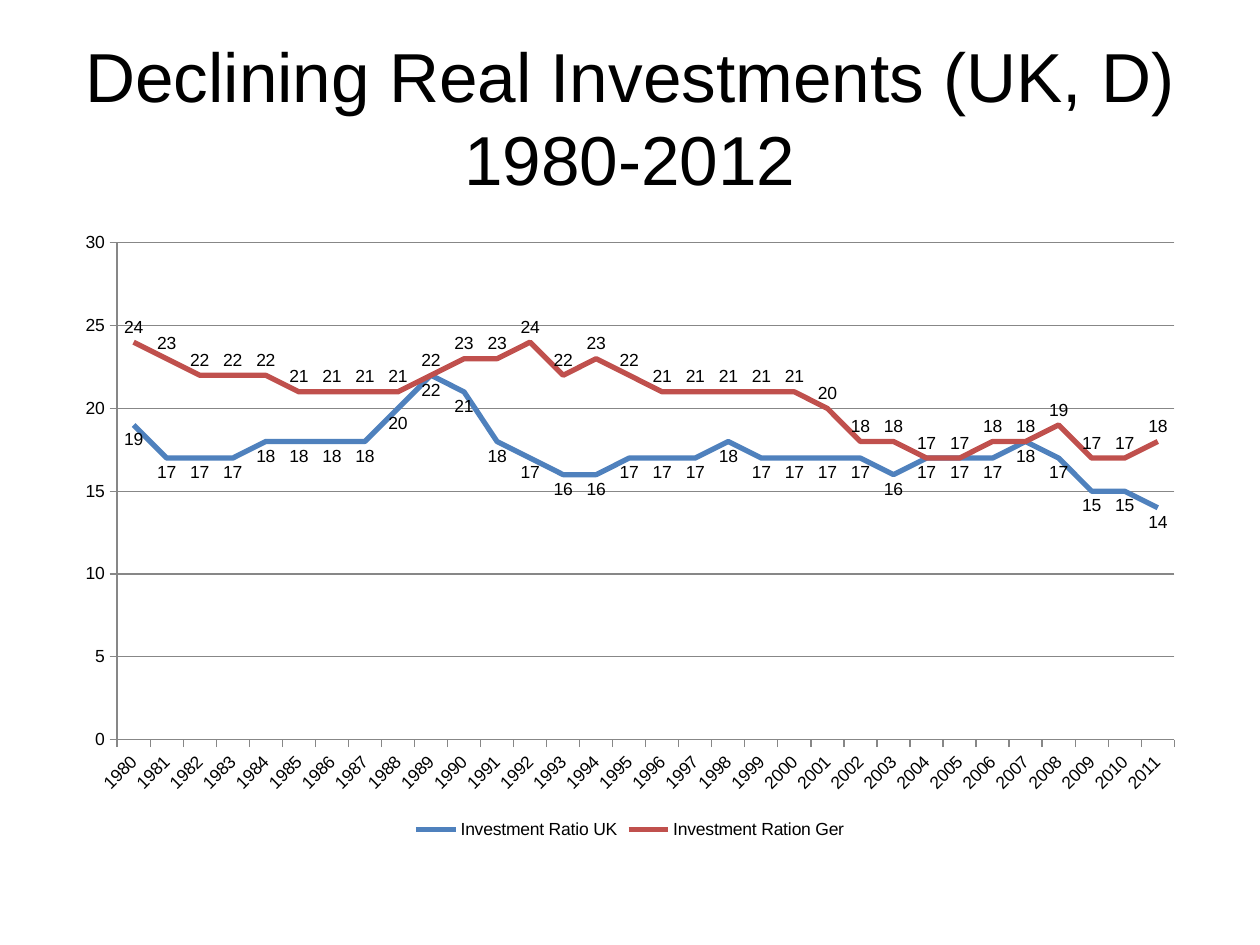
from pptx import Presentation
from pptx.chart.data import CategoryChartData
from pptx.dml.color import RGBColor
from pptx.enum.chart import (XL_CHART_TYPE, XL_LABEL_POSITION,
                             XL_LEGEND_POSITION, XL_MARKER_STYLE, XL_TICK_MARK)
from pptx.enum.text import MSO_ANCHOR, PP_ALIGN
from pptx.util import Inches, Pt

LINE = XL_CHART_TYPE.LINE
ABOVE, BELOW = XL_LABEL_POSITION.ABOVE, XL_LABEL_POSITION.BELOW
BOTTOM = XL_LEGEND_POSITION.BOTTOM
BARE = XL_MARKER_STYLE.NONE
OUT, NONE = XL_TICK_MARK.OUTSIDE, XL_TICK_MARK.NONE
CENTER, MIDDLE = PP_ALIGN.CENTER, MSO_ANCHOR.MIDDLE

# Content
TITLE = "Declining Real Investments (UK, D) 1980-2012"
YEARS = [str(year) for year in range(1980, 2012)]
RATIOS = [
    {"name": "Investment Ratio UK", "color": "uk", "place": BELOW,
     "vals": [19, 17, 17, 17, 18, 18, 18, 18, 20, 22, 21, 18, 17, 16, 16, 17,
              17, 17, 18, 17, 17, 17, 17, 16, 17, 17, 17, 18, 17, 15, 15, 14]},
    {"name": "Investment Ration Ger", "color": "ger", "place": ABOVE,
     "vals": [24, 23, 22, 22, 22, 21, 21, 21, 21, 22, 23, 23, 24, 22, 23, 22,
              21, 21, 21, 21, 21, 20, 18, 18, 17, 17, 18, 18, 19, 17, 17, 18]},
]

# Theme
THEME = {
    "font": "Arial",
    "title": Pt(39.6), "label": Pt(10),
    "line": Pt(3), "rule": Pt(0.75),
    "text": RGBColor.from_string("000000"),
    "grid": RGBColor.from_string("878787"),
    "uk": RGBColor.from_string("4F81BD"),
    "ger": RGBColor.from_string("C0504D"),
}

# Layout
WIDE, HIGH, EDGE = 10, 7.5, 0.5
SPAN = WIDE - 2 * EDGE
TITLE_BOX = (EDGE, 0.3, SPAN, 1.25)
CHART_BOX = (EDGE, 1.75, SPAN, 4.95)


def put(thing, values):
    for name, value in values.items():
        setattr(thing, name, value)


def style(font, size):
    put(font, {"name": THEME["font"], "size": THEME[size], "bold": False})
    font.color.rgb = THEME["text"]


def rule(line, color, width):
    line.color.rgb = THEME[color]
    line.width = THEME[width]


def add_title(slide):
    title = slide.shapes.title
    sides = ("left", "top", "width", "height")
    put(title, dict(zip(sides, map(Inches, TITLE_BOX))))
    frame = title.text_frame
    put(frame, {"text": TITLE, "word_wrap": True, "vertical_anchor": MIDDLE})
    para = frame.paragraphs[0]
    para.alignment = CENTER
    style(para.runs[0].font, "title")


def add_lines(slide):
    data = CategoryChartData()
    data.categories = YEARS
    for ratio in RATIOS:
        data.add_series(ratio["name"], ratio["vals"])
    chart = slide.shapes.add_chart(LINE, *map(Inches, CHART_BOX), data).chart
    put(chart, {"has_title": False, "has_legend": True})
    style(chart.font, "label")
    put(chart.legend, {"position": BOTTOM, "include_in_layout": False})

    # Axes
    years, scale = chart.category_axis, chart.value_axis
    for axis in (years, scale):
        put(axis, {"major_tick_mark": OUT, "minor_tick_mark": NONE})
        style(axis.tick_labels.font, "label")
        rule(axis.format.line, "grid", "rule")
    put(scale, {"minimum_scale": 0, "maximum_scale": 30, "major_unit": 5,
                "has_major_gridlines": True})
    rule(scale.major_gridlines.format.line, "grid", "rule")
    years.has_major_gridlines = False

    # Lines and their labels
    plot = chart.plots[0]
    plot.vary_by_categories = False
    for row, ratio in zip(plot.series, RATIOS):
        row.smooth = False
        row.marker.style = BARE
        rule(row.format.line, ratio["color"], "line")
        labels = row.data_labels
        put(labels, {"show_value": True, "position": ratio["place"]})
        style(labels.font, "label")


deck = Presentation()
put(deck, {"slide_width": Inches(WIDE), "slide_height": Inches(HIGH)})
slide = deck.slides.add_slide(deck.slide_layouts[5])
add_title(slide)
add_lines(slide)
deck.save("out.pptx")
